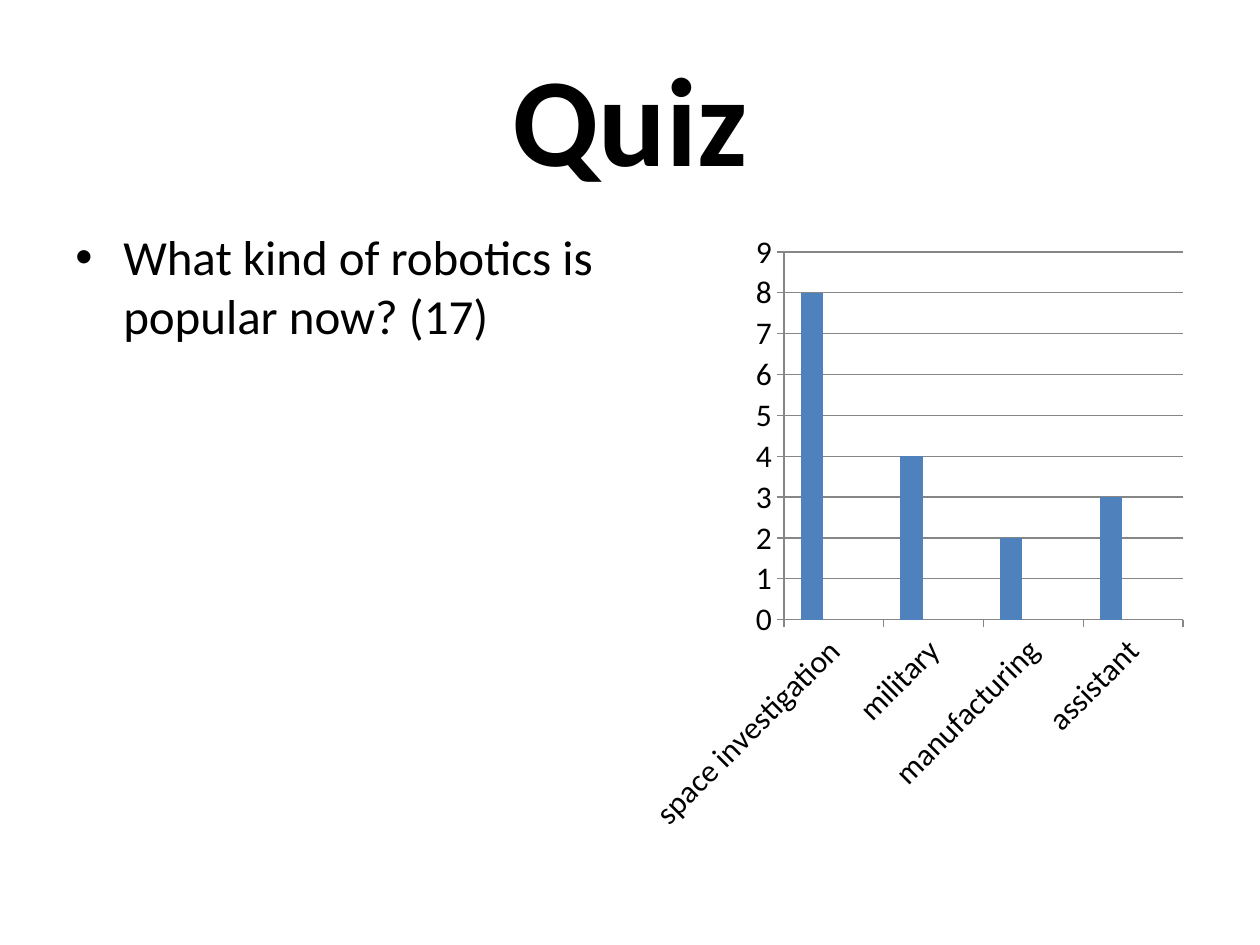
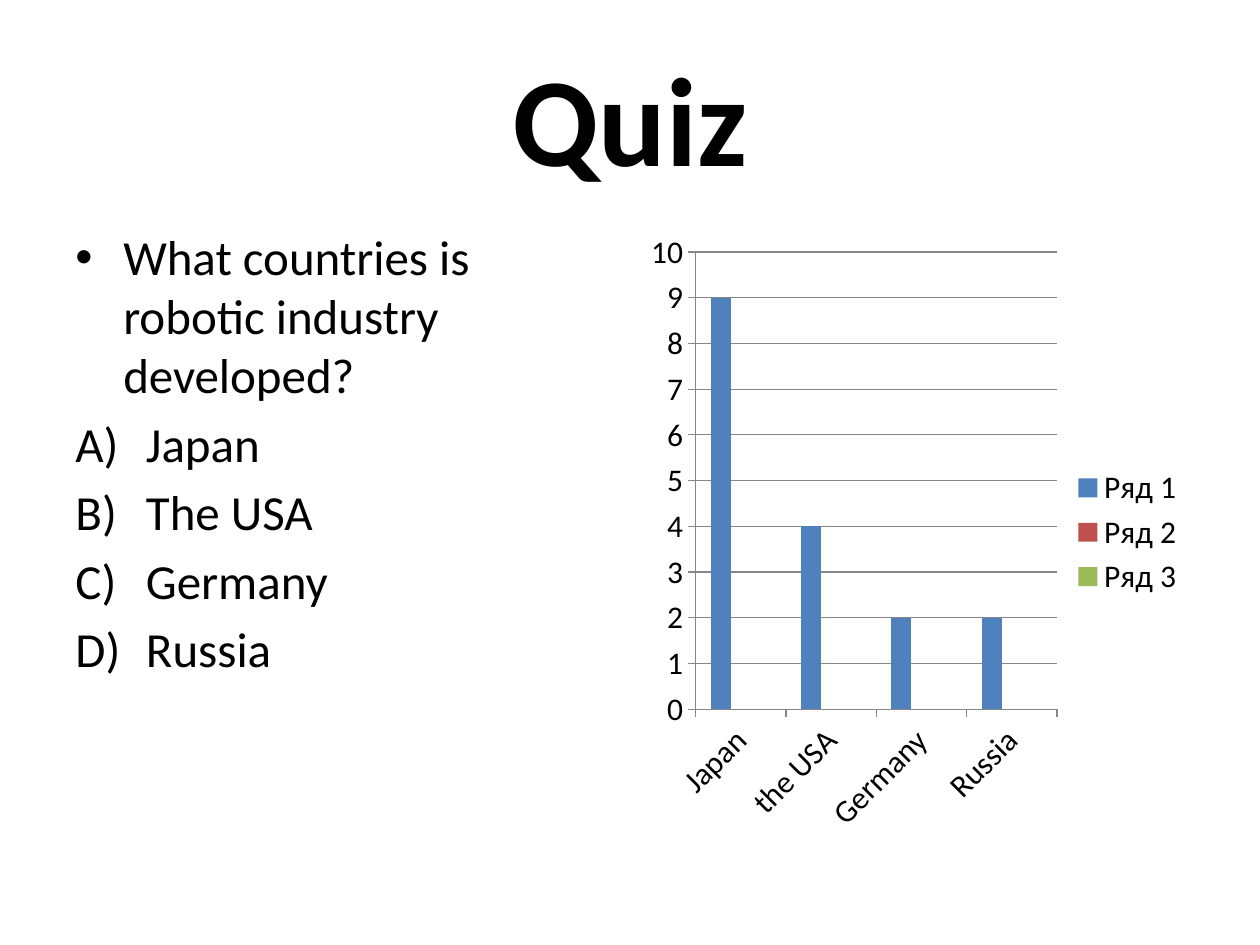
from lxml.etree import SubElement
from pptx import Presentation
from pptx.chart.data import CategoryChartData
from pptx.dml.color import RGBColor
from pptx.enum.chart import XL_CHART_TYPE, XL_LEGEND_POSITION, XL_TICK_MARK
from pptx.enum.text import MSO_ANCHOR, PP_ALIGN
from pptx.oxml.ns import qn
from pptx.util import Inches, Pt

FONT = "Calibri"
BLACK = RGBColor(0x00, 0x00, 0x00)
AXIS_GRAY = RGBColor(0x86, 0x86, 0x86)
SERIES_COLORS = [
    RGBColor(0x4F, 0x81, 0xBD),
    RGBColor(0xC0, 0x50, 0x4D),
    RGBColor(0x9B, 0xBB, 0x59),
]
TITLE_BOX = (0.5, 0.3, 9, 1.25)
QUESTION_BOX = (0.5, 1.75, 4.42, 4.95)
CHART_BOX = (5.08, 1.75, 4.42, 4.95)


def add_text_frame(slide, box, anchor=MSO_ANCHOR.TOP):
    shape = slide.shapes.add_textbox(*map(Inches, box))
    frame = shape.text_frame
    frame.word_wrap = True
    frame.vertical_anchor = anchor
    return frame


def set_bullet(paragraph, indent, numbered):
    properties = paragraph._p.get_or_add_pPr()
    properties.set("marL", str(Inches(indent)))
    properties.set("indent", str(-Inches(indent)))
    if numbered:
        SubElement(properties, qn("a:buFont"), typeface="+mj-lt")
        SubElement(properties, qn("a:buAutoNum"), type="alphaUcParenR")
    else:
        SubElement(properties, qn("a:buFont"), typeface="Arial")
        SubElement(properties, qn("a:buChar"), char="•")


def write_text(frame, text, size=28, bold=False, align=PP_ALIGN.LEFT,
               indent=0, numbered=False):
    first = not frame.text
    paragraph = frame.paragraphs[0] if first else frame.add_paragraph()
    if indent:
        set_bullet(paragraph, indent, numbered)
    paragraph.alignment = align
    if not first:
        paragraph.space_before = Pt(size * 0.2)
    run = paragraph.add_run()
    run.text = text
    run.font.name = FONT
    run.font.size = Pt(size)
    run.font.bold = bold
    run.font.color.rgb = BLACK


def add_title(slide, box):
    frame = add_text_frame(slide, box, anchor=MSO_ANCHOR.MIDDLE)
    write_text(frame, "Quiz", size=72, bold=True, align=PP_ALIGN.CENTER)


def add_question(slide, box, question, answers):
    frame = add_text_frame(slide, box)
    write_text(frame, question, indent=0.38)
    for answer in answers:
        write_text(frame, answer, indent=0.56, numbered=True)


def add_votes_chart(slide, box, votes, series_word, scale_top, legend):
    data = CategoryChartData()
    data.categories = list(votes)
    blanks = [None] * len(votes)
    for number, values in enumerate([list(votes.values()), blanks, blanks], 1):
        data.add_series(f"{series_word} {number}", values)
    chart = slide.shapes.add_chart(
        XL_CHART_TYPE.COLUMN_CLUSTERED, *map(Inches, box), data).chart
    chart.font.name = FONT
    chart.font.size = Pt(18)
    chart.font.color.rgb = BLACK
    chart.has_title = False
    chart.has_legend = legend
    if legend:
        chart.legend.position = XL_LEGEND_POSITION.RIGHT
        chart.legend.include_in_layout = False

    plot = chart.plots[0]
    plot.vary_by_categories = False
    plot.gap_width = 150
    for series, color in zip(plot.series, SERIES_COLORS):
        series.format.fill.solid()
        series.format.fill.fore_color.rgb = color

    value_axis = chart.value_axis
    value_axis.minimum_scale = 0
    value_axis.maximum_scale = scale_top
    value_axis.major_unit = 1
    value_axis.has_major_gridlines = True
    for axis in (chart.category_axis, value_axis):
        axis.major_tick_mark = XL_TICK_MARK.OUTSIDE
    for part in (chart.category_axis, value_axis, value_axis.major_gridlines):
        part.format.line.color.rgb = AXIS_GRAY
        part.format.line.width = Pt(0.75)


def add_quiz_slide(presentation, question, votes, series_word, scale_top,
                   answers=(), legend=False):
    slide = presentation.slides.add_slide(presentation.slide_layouts[6])
    add_title(slide, TITLE_BOX)
    add_question(slide, QUESTION_BOX, question, answers)
    add_votes_chart(slide, CHART_BOX, votes, series_word, scale_top, legend)


def main():
    presentation = Presentation()
    presentation.slide_width = Inches(10)
    presentation.slide_height = Inches(7.5)
    add_quiz_slide(
        presentation,
        "What kind of robotics is popular now? (17)",
        {"space investigation": 8, "military": 4,
         "manufacturing": 2, "assistant": 3},
        series_word="Series",
        scale_top=9,
    )
    add_quiz_slide(
        presentation,
        "What countries is robotic industry developed?",
        {"Japan": 9, "the USA": 4, "Germany": 2, "Russia": 2},
        series_word="Ряд",
        scale_top=10,
        answers=["Japan", "The USA", "Germany", "Russia"],
        legend=True,
    )
    presentation.save("out.pptx")


if __name__ == "__main__":
    main()
